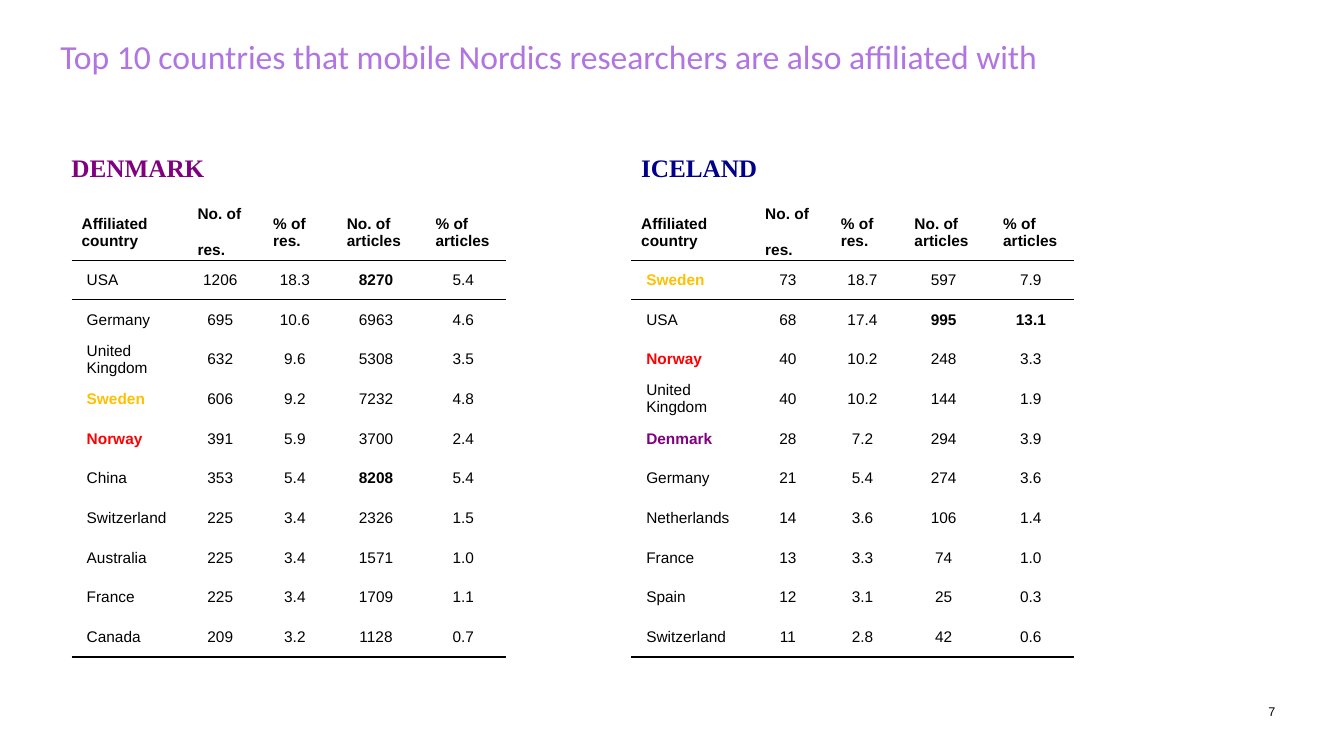
from lxml import etree
from pptx import Presentation
from pptx.dml.color import RGBColor
from pptx.enum.text import MSO_ANCHOR, PP_ALIGN
from pptx.oxml.ns import qn
from pptx.util import Inches, Pt

LEFT, CENTER = PP_ALIGN.LEFT, PP_ALIGN.CENTER
TOP, MIDDLE = MSO_ANCHOR.TOP, MSO_ANCHOR.MIDDLE

COLORS = {
    "title": "B175E1",
    "text": "000000",
    "white": "FFFFFF",
    "Denmark": "800080",
    "Iceland": "00008B",
    "Sweden": "FFC000",
    "Norway": "FF0000",
}
NO_TABLE_STYLE = "{2D5ABB26-0587-4C30-8999-92F81FD0307C}"

# A vertical tab is a line break inside the paragraph
HEADERS = ["Affiliated country", "No. of \vres.", "% of res.",
           "No. of articles", "% of \varticles"]
VALUE_WIDTHS = [0.75, 0.73, 0.88, 0.85]
HIGHLIGHTS = {"8270", "8208", "995", "13.1"}

DENMARK_ROWS = [
    ("USA", "1206", "18.3", "8270", "5.4"),
    ("Germany", "695", "10.6", "6963", "4.6"),
    ("United Kingdom", "632", "9.6", "5308", "3.5"),
    ("Sweden", "606", "9.2", "7232", "4.8"),
    ("Norway", "391", "5.9", "3700", "2.4"),
    ("China", "353", "5.4", "8208", "5.4"),
    ("Switzerland", "225", "3.4", "2326", "1.5"),
    ("Australia", "225", "3.4", "1571", "1.0"),
    ("France", "225", "3.4", "1709", "1.1"),
    ("Canada", "209", "3.2", "1128", "0.7"),
]
ICELAND_ROWS = [
    ("Sweden", "73", "18.7", "597", "7.9"),
    ("USA", "68", "17.4", "995", "13.1"),
    ("Norway", "40", "10.2", "248", "3.3"),
    ("United Kingdom", "40", "10.2", "144", "1.9"),
    ("Denmark", "28", "7.2", "294", "3.9"),
    ("Germany", "21", "5.4", "274", "3.6"),
    ("Netherlands", "14", "3.6", "106", "1.4"),
    ("France", "13", "3.3", "74", "1.0"),
    ("Spain", "12", "3.1", "25", "0.3"),
    ("Switzerland", "11", "2.8", "42", "0.6"),
]


def write_text(frame, text, *, size=11, font="Arial", color="text",
               bold=False, align=LEFT, line_spacing=None):
    para = frame.paragraphs[0]
    para.text = text
    para.alignment = align
    if line_spacing:
        para.line_spacing = line_spacing
    for span in para.runs:
        span.font.size = Pt(size)
        span.font.name = font
        span.font.bold = bold
        span.font.color.rgb = RGBColor.from_string(COLORS[color])
    # Line breaks carry their own text size
    for line_break in para._p.findall(qn("a:br")):
        etree.SubElement(line_break, qn("a:rPr"), sz=str(size * 100))


def add_text(page, text, left, top, width, height, *, margins=(0, 0),
             anchor=TOP, **text_format):
    box = page.shapes.add_textbox(Inches(left), Inches(top),
                                  Inches(width), Inches(height))
    frame = box.text_frame
    frame.word_wrap = True
    frame.vertical_anchor = anchor
    frame.margin_left = frame.margin_right = Inches(margins[0])
    frame.margin_top = frame.margin_bottom = Inches(margins[1])
    write_text(frame, text, **text_format)


def add_rule(cell, side):
    line = etree.Element(qn(f"a:ln{side}"), w=str(Pt(1)))
    fill = etree.SubElement(line, qn("a:solidFill"))
    etree.SubElement(fill, qn("a:srgbClr"), val=COLORS["text"])
    cell._tc.get_or_add_tcPr().insert(0, line)


def fill_cell(cell, text, row, column):
    is_header = row == 0
    is_country = column == 0
    cell.fill.solid()
    cell.fill.fore_color.rgb = RGBColor.from_string(COLORS["white"])
    cell.vertical_anchor = MIDDLE
    if not (is_header and is_country):
        cell.margin_left = cell.margin_right = Inches(0.15)
        cell.margin_top = cell.margin_bottom = 0
    write_text(cell.text_frame, text,
               bold=is_header or text in HIGHLIGHTS or text in COLORS,
               color=text if text in COLORS else "text",
               align=LEFT if is_header or is_country else CENTER)


def add_country_table(page, rows, left, country_width):
    widths = [country_width] + VALUE_WIDTHS
    header_height, body_height = Inches(0.55), Inches(3.94)
    table = page.shapes.add_table(
        len(rows) + 1, len(widths), Inches(left), Inches(2.03),
        Inches(sum(widths)), header_height + body_height).table
    table.first_row = table.horz_banding = False
    table._tbl.tblPr.find(qn("a:tableStyleId")).text = NO_TABLE_STYLE

    for column, width in zip(table.columns, widths):
        column.width = Inches(width)
    for index, texts in enumerate([HEADERS] + rows):
        table.rows[index].height = (body_height // len(rows) if index
                                    else header_height)
        for column, text in enumerate(texts):
            cell = table.cell(index, column)
            fill_cell(cell, text, index, column)
            if index == 1:
                add_rule(cell, "T")
            elif index in (0, len(rows)):
                add_rule(cell, "B")


def main():
    deck = Presentation()
    deck.slide_width, deck.slide_height = Inches(13.33), Inches(7.5)
    page = deck.slides.add_slide(deck.slide_layouts[6])

    # Title and page number
    add_text(page, "Top 10 countries that mobile Nordics researchers are also "
             "affiliated with", 0.6, 0.4, 11.69, 0.28, size=24,
             font="Calibri", color="title", line_spacing=0.9)
    add_text(page, "7", 12.58, 6.94, 0.24, 0.24, size=9, anchor=MIDDLE)

    # One heading and table per country
    for country, rows, heading_left, table_left, country_width in (
            ("Denmark", DENMARK_ROWS, 0.61, 0.71, 1.1),
            ("Iceland", ICELAND_ROWS, 6.26, 6.26, 1.18)):
        add_text(page, country.upper(), heading_left, 1.46, 3.94, 0.4,
                 margins=(0.1, 0.05), size=18, font="Times New Roman",
                 color=country, bold=True)
        add_country_table(page, rows, table_left, country_width)

    deck.save("out.pptx")


if __name__ == "__main__":
    main()
